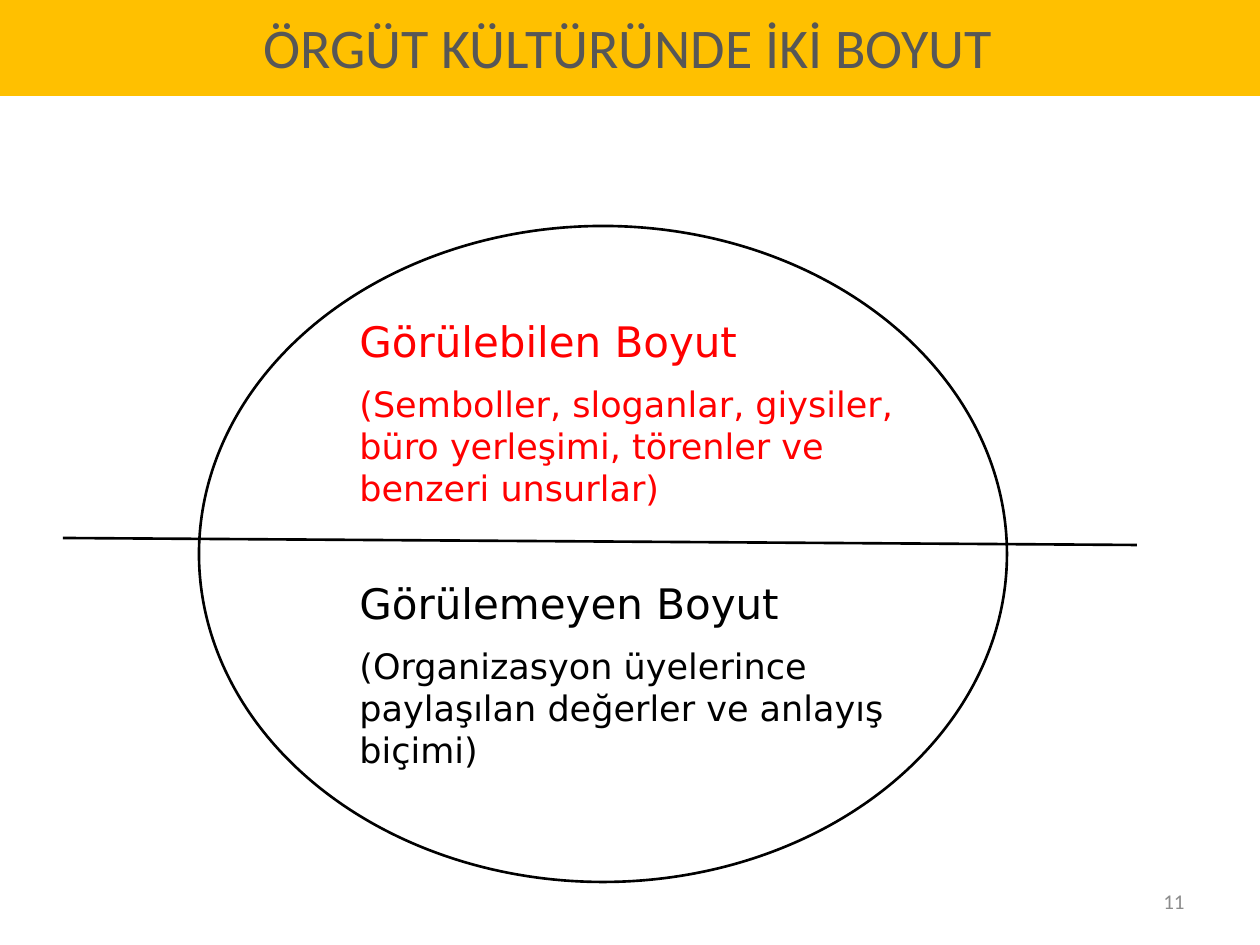
from lxml import etree
from pptx import Presentation
from pptx import util as u
from pptx.dml.color import RGBColor
from pptx.enum import shapes, text
from pptx.oxml.ns import qn

SCALE = u.Inches(1) // 126
BLACK = "000000"


def px(*lengths):
    return [length * SCALE for length in lengths]


def color(value):
    return RGBColor.from_string(value)


def style_line(line):
    line.color.rgb = color(BLACK)
    line.width = u.Pt(1.5)


def style_paragraph(paragraph, words, font, size, hex_color, align):
    paragraph.text = words
    paragraph.alignment = align
    paragraph.font.name = font
    paragraph.font.size = u.Pt(size)
    paragraph.font.color.rgb = color(hex_color)


def add_title_band(slide, box):
    band = slide.shapes.add_shape(shapes.MSO_SHAPE.RECTANGLE, *px(*box))
    band.shadow.inherit = False
    band.fill.solid()
    band.fill.fore_color.rgb = color("FFC000")
    band.line.fill.background()
    frame = band.text_frame
    frame.vertical_anchor = text.MSO_ANCHOR.MIDDLE
    style_paragraph(frame.paragraphs[0], "ÖRGÜT KÜLTÜRÜNDE İKİ BOYUT",
                    "Calibri", 32, "575757", text.PP_ALIGN.CENTER)


def add_dimension(slide, box, heading, detail, hex_color):
    frame = slide.shapes.add_textbox(*px(*box)).text_frame
    frame.word_wrap = True
    frame.margin_top = px(10)[0]
    style_paragraph(frame.paragraphs[0], heading, "DejaVu Sans", 24,
                    hex_color, text.PP_ALIGN.LEFT)
    paragraph = frame.add_paragraph()
    style_paragraph(paragraph, detail, "DejaVu Sans", 20,
                    hex_color, text.PP_ALIGN.LEFT)
    paragraph.space_before = u.Pt(10)


def add_culture_diagram(slide, box):
    left, top, width, height = box
    divider = slide.shapes.add_connector(
        shapes.MSO_CONNECTOR.STRAIGHT,
        *px(left - 136, top + 312, left + 938, top + 319))
    style_line(divider.line)
    etree.SubElement(divider._element.spPr, qn("a:effectLst"))

    ellipse = slide.shapes.add_shape(shapes.MSO_SHAPE.OVAL, *px(*box))
    ellipse.shadow.inherit = False
    ellipse.fill.background()
    style_line(ellipse.line)

    add_dimension(
        slide, (left + 148, top + 79, 567, 210), "Görülebilen Boyut",
        "(Semboller, sloganlar, giysiler, büro yerleşimi, törenler ve benzeri unsurlar)",
        "FF0000")
    add_dimension(
        slide, (left + 148, top + 341, 577, 210), "Görülemeyen Boyut",
        "(Organizasyon üyelerince paylaşılan değerler ve anlayış biçimi)", BLACK)


def add_page_number(slide, box):
    frame = slide.shapes.add_textbox(*px(*box)).text_frame
    frame.word_wrap = True
    frame.vertical_anchor = text.MSO_ANCHOR.MIDDLE
    style_paragraph(frame.paragraphs[0], "11", "Calibri", 12,
                    "8C8C8C", text.PP_ALIGN.RIGHT)


def main():
    presentation = Presentation()
    presentation.slide_width, presentation.slide_height = px(1260, 945)
    slide = presentation.slides.add_slide(presentation.slide_layouts[6])
    add_culture_diagram(slide, (199, 226, 808, 656))
    add_title_band(slide, (-4, -4, 1264, 100))
    add_page_number(slide, (903, 876, 294, 50))
    presentation.save("out.pptx")


if __name__ == "__main__":
    main()
